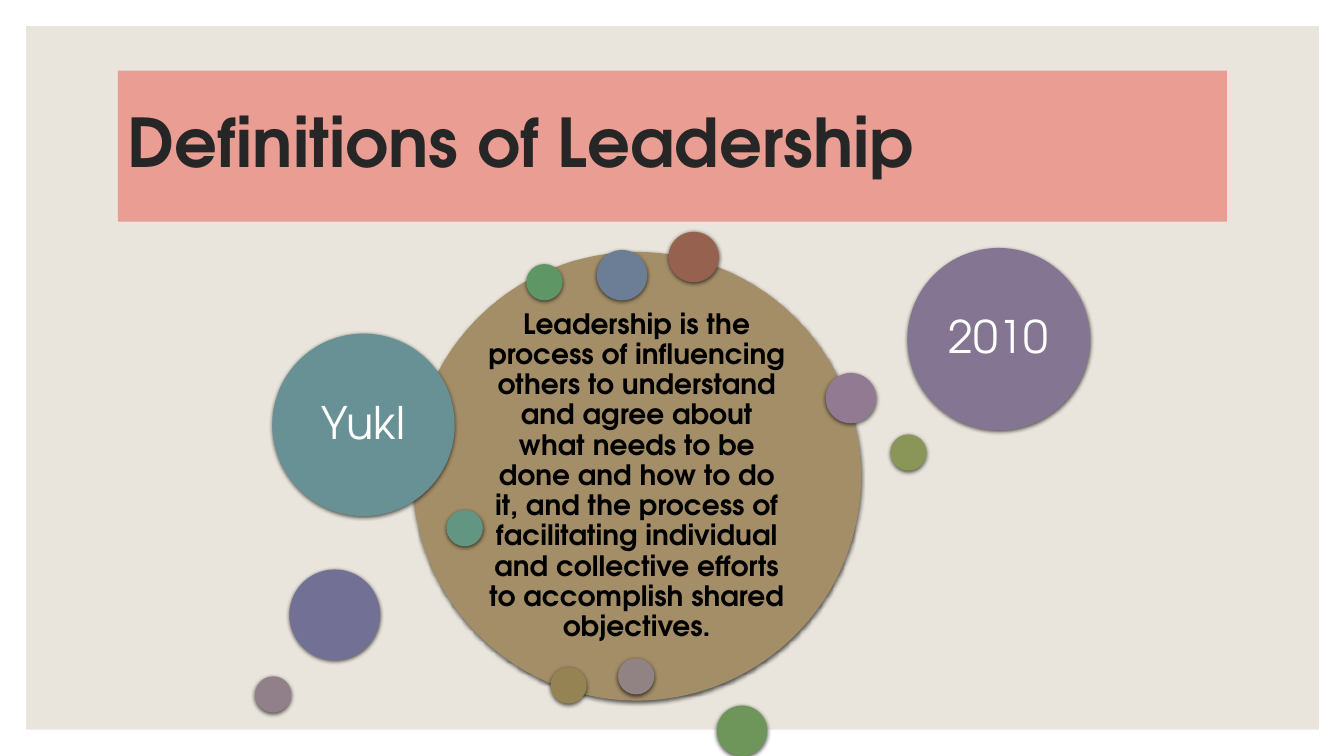
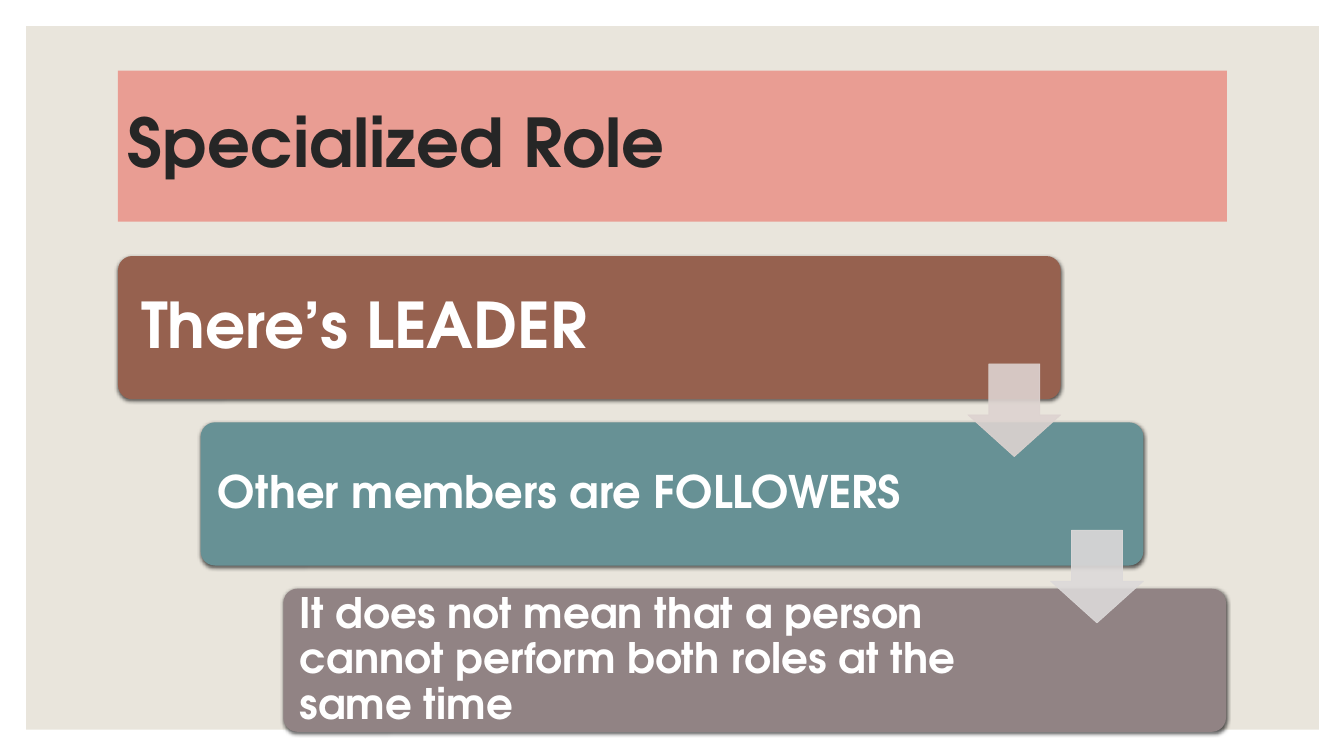
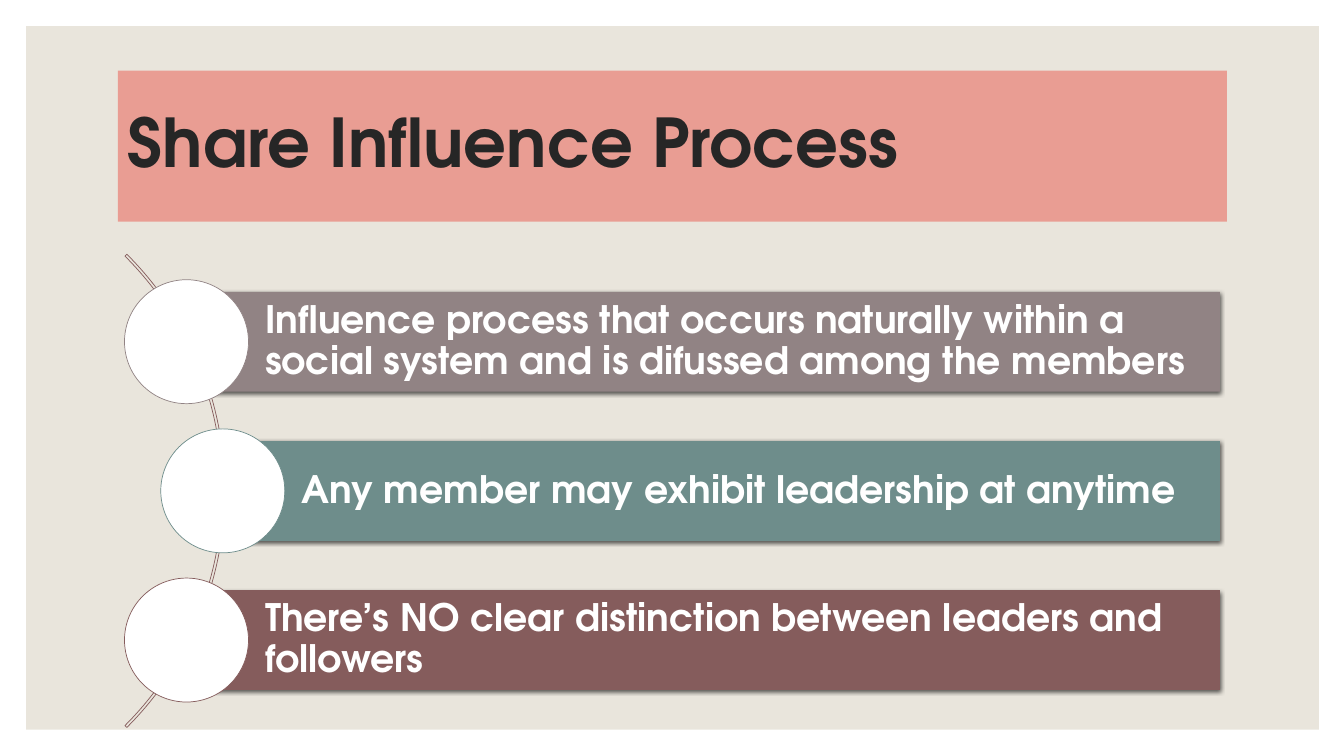
"""Build three slides on leadership: definitions, specialized role, shared influence."""
import lxml.etree
import pptx
import pptx.dml.color
import pptx.enum.shapes
import pptx.enum.text
import pptx.oxml.ns
import pptx.util

Inches = pptx.util.Inches
Pt = pptx.util.Pt
RGB = pptx.dml.color.RGBColor
SHAPE = pptx.enum.shapes.MSO_SHAPE
ALIGN = pptx.enum.text.PP_ALIGN
qn = pptx.oxml.ns.qn

FONT = "TeX Gyre Adventor"
WHITE = RGB(0xFF, 0xFF, 0xFF)
BLACK = RGB(0x00, 0x00, 0x00)
PANEL = RGB(0xE9, 0xE5, 0xDC)
TITLE_BAND = RGB(0xE9, 0x9D, 0x93)
TITLE_INK = RGB(0x26, 0x26, 0x26)
RUST = RGB(0x96, 0x61, 0x4F)
TEAL = RGB(0x67, 0x91, 0x95)
TAUPE = RGB(0x91, 0x83, 0x84)
SAGE = RGB(0x6E, 0x8D, 0x8B)
WINE = RGB(0x85, 0x5C, 0x5C)
SAND = RGB(0xA3, 0x8E, 0x68)
OCHRE = RGB(0x96, 0x83, 0x53)
OLIVE = RGB(0x8A, 0x96, 0x57)
LEAF = RGB(0x6E, 0x96, 0x5B)
GREEN = RGB(0x5F, 0x96, 0x66)
MINT = RGB(0x63, 0x96, 0x82)
STEEL = RGB(0x6C, 0x7E, 0x95)
INDIGO = RGB(0x72, 0x70, 0x94)
VIOLET = RGB(0x84, 0x75, 0x93)
ORCHID = RGB(0x92, 0x7A, 0x92)
MAUVE = RGB(0x91, 0x7F, 0x89)
ARROW_ROSE = RGB(0xDD, 0xD3, 0xD0)
ARROW_GREY = RGB(0xDC, 0xD9, 0xD9)


def draw(slide, kind, box, fill=None, line=None, shadow=False, adjust=()):
    """Add a preset shape with a flat fill, an optional thin line and a soft shadow."""
    shape = slide.shapes.add_shape(kind, *map(Inches, box))
    for index, value in enumerate(adjust):
        shape.adjustments[index] = value
    if fill is None:
        shape.fill.background()
    else:
        shape.fill.solid()
        shape.fill.fore_color.rgb = fill
    if line is None:
        shape.line.fill.background()
    else:
        shape.line.color.rgb = line
        shape.line.width = Pt(0.5)
    shape.shadow.inherit = False
    if shadow:
        effects = shape.element.spPr.find(qn("a:effectLst"))
        outer = lxml.etree.SubElement(effects, qn("a:outerShdw"), blurRad=str(Pt(3)),
                                      dist=str(Pt(1)), dir="5400000", rotWithShape="0")
        black = lxml.etree.SubElement(outer, qn("a:srgbClr"), val="000000")
        lxml.etree.SubElement(black, qn("a:alpha"), val="63000")
    return shape


def write(shape, text, size, color=WHITE, bold=True, align=ALIGN.LEFT, insets=(0.1, 0.05, 0.1, 0.05)):
    """Set one paragraph in the middle of a shape; insets run left, top, right, bottom."""
    frame = shape.text_frame
    frame.word_wrap = True
    frame.vertical_anchor = pptx.enum.text.MSO_ANCHOR.MIDDLE
    for side, inset in zip(("left", "top", "right", "bottom"), insets):
        setattr(frame, f"margin_{side}", Inches(inset))
    paragraph = frame.paragraphs[0]
    paragraph.alignment = align
    paragraph.line_spacing = 0.9
    run = paragraph.add_run()
    run.text = text
    for name, value in {"name": FONT, "size": Pt(size), "bold": bold}.items():
        setattr(run.font, name, value)
    run.font.color.rgb = color


deck = pptx.Presentation()
deck.slide_width = Inches(13.33)
deck.slide_height = Inches(7.5)

slides = []
for title in ("Definitions of Leadership", "Specialized Role", "Share Influence Process"):
    slide = deck.slides.add_slide(deck.slide_layouts[6])
    draw(slide, SHAPE.RECTANGLE, (0.26, 0.26, 12.82, 6.98), PANEL)
    write(draw(slide, SHAPE.RECTANGLE, (1.17, 0.7, 11, 1.5), TITLE_BAND), title, 48, TITLE_INK)
    slides.append(slide)
definitions, roles, influence = slides

DEFINITION = (
    "Leadership is the process of influencing others to understand and agree about what needs "
    "to be done and how to do it, and the process of facilitating individual and collective "
    "efforts to accomplish shared objectives."
)
bubbles = [
    (4.09, 2.5, 4.45, SAND, (DEFINITION, 20, BLACK, True, 0.08)),
    (6.63, 2.3, 0.5, RUST, None),
    (5.46, 6.62, 0.36, OCHRE, None),
    (8.83, 4.31, 0.36, OLIVE, None),
    (7.11, 7, 0.5, LEAF, None),
    (5.22, 2.62, 0.36, GREEN, None),
    (4.43, 5.06, 0.36, MINT, None),
    (2.7, 3.31, 1.81, TEAL, ("Yukl", 32, WHITE, False, 0.13)),
    (5.92, 2.48, 0.5, STEEL, None),
    (2.87, 5.65, 0.9, INDIGO, None),
    (9, 2.46, 1.81, VIOLET, ("2010", 32, WHITE, False, 0.13)),
    (8.19, 3.7, 0.5, ORCHID, None),
    (2.53, 6.71, 0.36, MAUVE, None),
    (6.13, 6.53, 0.36, TAUPE, None),
]
for left, top, diameter, color, label in bubbles:
    bubble = draw(definitions, SHAPE.OVAL, (left, top, diameter, diameter), color, shadow=True)
    if label:
        text, size, ink, bold, inset = label
        write(bubble, text, size, ink, bold, ALIGN.CENTER, [inset] * 4)

STEP_LEFT, STEP_TOP, STEP_WIDTH, STEP_HEIGHT = 1.17, 2.54, 9.35, 1.42
STEP_RIGHT_SHIFT, STEP_DOWN_SHIFT = 0.82, 1.65
ARROW_SIZE = 0.92
steps = [
    ("There’s LEADER", 45, RUST, 0.19, 1.64),
    ("Other members are FOLLOWERS", 32, TEAL, 0.13, 1.88),
    ("It does not mean that a person cannot perform both roles at the same time", 30, TAUPE, 0.12, 1.87),
]
for i, (text, size, color, inset, right_inset) in enumerate(steps):
    box = (STEP_LEFT + i * STEP_RIGHT_SHIFT, STEP_TOP + i * STEP_DOWN_SHIFT, STEP_WIDTH, STEP_HEIGHT)
    step = draw(roles, SHAPE.ROUNDED_RECTANGLE, box, color, shadow=True, adjust=[0.1])
    write(step, text, size, insets=(inset, inset, right_inset, inset))

for i, color in enumerate((ARROW_ROSE, ARROW_GREY)):
    left = STEP_LEFT + STEP_WIDTH - ARROW_SIZE + i * STEP_RIGHT_SHIFT
    top = STEP_TOP + 1.07 + i * STEP_DOWN_SHIFT
    arrow = draw(roles, SHAPE.DOWN_ARROW, (left, top, ARROW_SIZE, ARROW_SIZE), color, color, adjust=[0.55, 0.45])
    for tint in arrow.element.spPr.iter(qn("a:srgbClr")):
        lxml.etree.SubElement(tint, qn("a:alpha"), val="90000")

draw(influence, SHAPE.BLOCK_ARC, (-4.41, 1.55, 6.64, 6.64), line=WINE, adjust=[189, 27, 0.004])

BAND_RIGHT, BAND_HEIGHT, DISC = 12.1, 0.99, 1.23
points = [
    ("Influence process that occurs naturally within a social system and is difussed among the members", 1.85, TAUPE),
    ("Any member may exhibit leadership at anytime", 2.21, SAGE),
    ("There’s NO clear distinction between leaders and followers", 1.85, WINE),
]
for i, (text, center_x, color) in enumerate(points):
    center_y = 3.39 + i * 1.48
    box = (center_x, center_y - BAND_HEIGHT / 2, BAND_RIGHT - center_x, BAND_HEIGHT)
    band = draw(influence, SHAPE.RECTANGLE, box, color, shadow=True)
    write(band, text, 27, insets=(0.78, 0.07, 0.07, 0.07))
    draw(influence, SHAPE.OVAL, (center_x - DISC / 2, center_y - DISC / 2, DISC, DISC), WHITE, color)

deck.save("out.pptx")
